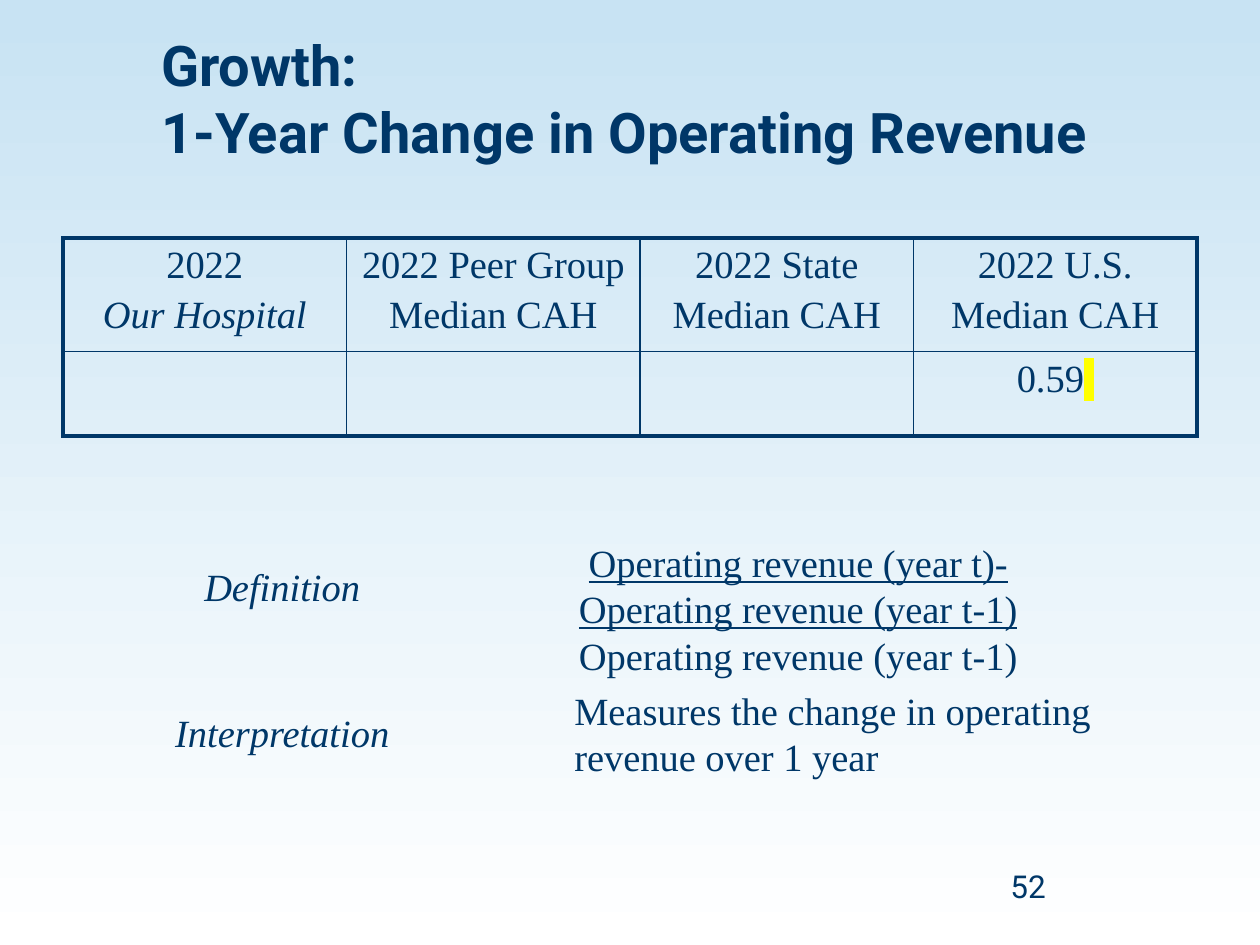
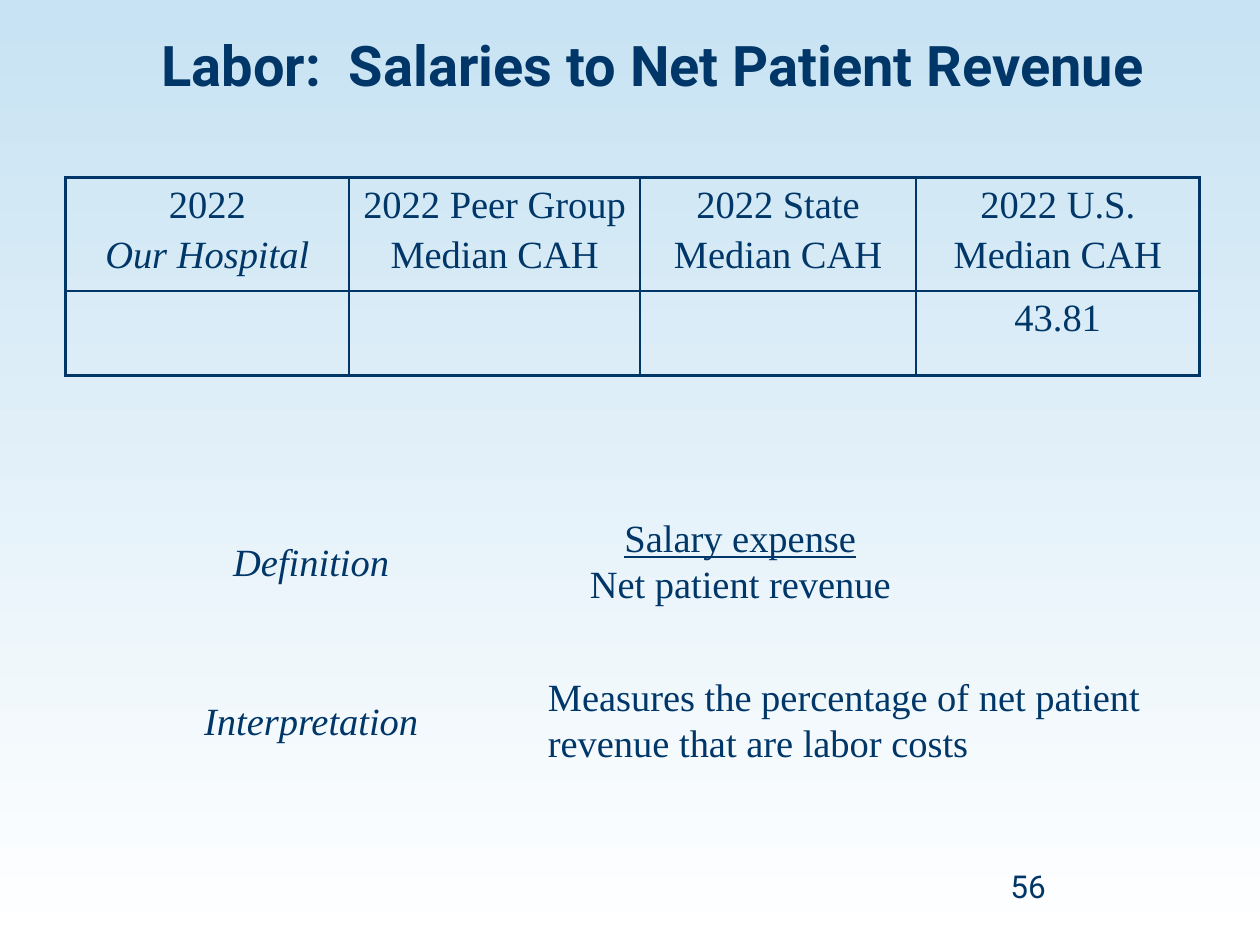
from lxml import etree
from pptx import Presentation
from pptx.dml.color import RGBColor
from pptx.enum.text import MSO_ANCHOR as Anchor, PP_ALIGN as Align
from pptx.oxml import parse_xml
from pptx.oxml.ns import nsdecls, qn
from pptx.util import Inches, Pt

# Content
HEADERS = [
    ("2022", "Our Hospital"),
    ("2022 Peer Group", "Median CAH"),
    ("2022 State", "Median CAH"),
    ("2022 U.S.", "Median CAH"),
]
SLIDES = [
    {
        "title": "Growth:\v1-Year Change in Operating Revenue",
        "number": "52",
        "median": "0.59",
        "highlight_after": True,
        "table_at": (0.5, 1.89),
        "columns": (2.25, 2.33, 2.17, 2.25),
        "numerator": "Operating revenue (year t)- Operating revenue (year t-1)",
        "denominator": "Operating revenue (year t-1)",
        "formula_box": (4.46, 4.23, 3.75, 1.21),
        "meaning": "Measures the change in operating revenue over 1 year",
        "meaning_box": (4.46, 5.4, 4.33, 0.84),
        "labels_center": 2.24,
        "label_tops": (4.42, 5.58),
    },
    {
        "title": "Labor:  Salaries to Net Patient Revenue",
        "number": "56",
        "median": "43.81",
        "highlight_after": False,
        "table_at": (0.52, 1.41),
        "columns": (2.25, 2.31, 2.19, 2.25),
        "numerator": "Salary expense",
        "denominator": "Net patient revenue",
        "formula_box": (4.5, 4.03, 2.75, 0.84),
        "meaning": "Measures the percentage of net patient revenue that are labor costs",
        "meaning_box": (4.25, 5.29, 4.92, 0.84),
        "labels_center": 2.47,
        "label_tops": (4.22, 5.48),
    },
]

# Shared style
NAVY, SKY, WHITE, YELLOW = "003768", "C8E3F3", "FFFFFF", "FFFF00"
HEADING_FONT, BODY_FONT = "Roboto", "Times New Roman"
BODY_SIZE = 22
TITLE_BOX = (1.18, 0.19, 8.26, 1.09)
NUMBER_BOX = (7.92, 6.83, 2.08, 0.5)
LABELS = [("Definition", 1.44), ("Interpretation", 1.91)]
LABEL_HEIGHT = 0.47
ROW_HEIGHTS = (0.9, 0.67)
OUTER_LINE, INNER_LINE = 2.25, 1


def color(hex_string):
    return RGBColor.from_string(hex_string)


def style(paragraph, size=BODY_SIZE, name=BODY_FONT, align=Align.LEFT,
          bold=False, italic=False, underline=False):
    paragraph.alignment = align
    font = paragraph.font
    font.size, font.name = Pt(size), name
    font.bold, font.italic, font.underline = bold, italic, underline
    font.color.rgb = color(NAVY)


def add_text(slide, box, lines, wrap=True):
    """Add a text box; lines holds (text, style options) pairs."""
    frame = slide.shapes.add_textbox(*map(Inches, box)).text_frame
    frame.word_wrap = wrap
    frame.text = "\n".join(text for text, _ in lines)
    for paragraph, (_, options) in zip(frame.paragraphs, lines):
        style(paragraph, **options)


def set_border(cell, side, width):
    line = parse_xml(
        f'<a:{side} {nsdecls("a")} w="{Pt(width)}"><a:solidFill>'
        f'<a:srgbClr val="{NAVY}"/></a:solidFill></a:{side}>')
    properties = cell._tc.get_or_add_tcPr()
    borders = [child for child in properties if child.tag.startswith(qn("a:ln"))]
    properties.insert(len(borders), line)


def add_highlight(run, hex_string):
    highlight = etree.SubElement(run.font._element, qn("a:highlight"))
    etree.SubElement(highlight, qn("a:srgbClr"), val=hex_string)


def add_medians(slide, content):
    left, top = content["table_at"]
    columns = content["columns"]
    table = slide.shapes.add_table(
        len(ROW_HEIGHTS), len(columns), Inches(left), Inches(top),
        Inches(sum(columns)), Inches(sum(ROW_HEIGHTS))).table
    table.first_row = table.horz_banding = False
    for column, width in zip(table.columns, columns):
        column.width = Inches(width)
    for row, height in zip(table.rows, ROW_HEIGHTS):
        row.height = Inches(height)

    last_row, last_column = len(ROW_HEIGHTS) - 1, len(columns) - 1
    values = [""] * last_column + [content["median"]]
    texts = [["\n".join(header) for header in HEADERS], values]
    for r, row_texts in enumerate(texts):
        for c, text in enumerate(row_texts):
            cell = table.cell(r, c)
            cell.text = text
            cell.margin_left = cell.margin_right = Inches(0.09)
            cell.fill.background()
            for index, paragraph in enumerate(cell.text_frame.paragraphs):
                style(paragraph, align=Align.CENTER,
                      italic=paragraph.text == "Our Hospital")
                if index:
                    paragraph.space_before = Pt(0.2 * BODY_SIZE)
            edges = {"lnL": c == 0, "lnR": c == last_column,
                     "lnT": r == 0, "lnB": r == last_row}
            for side, is_outer in edges.items():
                set_border(cell, side, OUTER_LINE if is_outer else INNER_LINE)

    if content["highlight_after"]:
        run = table.cell(last_row, last_column).text_frame.paragraphs[0].add_run()
        run.text = " "
        add_highlight(run, YELLOW)


def add_indicator_slide(presentation, content):
    slide = presentation.slides.add_slide(presentation.slide_layouts[5])

    # Title and slide number
    title = slide.shapes.title
    title.left, title.top, title.width, title.height = map(Inches, TITLE_BOX)
    title.text_frame.text = content["title"]
    title.text_frame.vertical_anchor = Anchor.TOP
    style(title.text_frame.paragraphs[0], 32, HEADING_FONT, bold=True)
    add_text(slide, NUMBER_BOX,
             [(content["number"], {"size": 18, "name": HEADING_FONT})])

    # Formula and its meaning
    add_text(slide, content["formula_box"], [
        (content["numerator"], {"align": Align.CENTER, "underline": True}),
        (content["denominator"], {"align": Align.CENTER}),
    ])
    add_text(slide, content["meaning_box"], [(content["meaning"], {})])

    # Row labels, centred on one axis
    for (label, width), top in zip(LABELS, content["label_tops"]):
        box = (content["labels_center"] - width / 2, top, width, LABEL_HEIGHT)
        add_text(slide, box, [(label, {"align": Align.CENTER, "italic": True})],
                 wrap=False)

    add_medians(slide, content)


def main():
    presentation = Presentation()
    presentation.slide_width, presentation.slide_height = Inches(10), Inches(7.5)

    # Background shared through the master
    fill = presentation.slide_master.background.fill
    fill.gradient()
    fill.gradient_angle = 270
    for stop, position, shade in zip(fill.gradient_stops, (0.01, 1), (SKY, WHITE)):
        stop.position = position
        stop.color.rgb = color(shade)

    for content in SLIDES:
        add_indicator_slide(presentation, content)
    presentation.save("out.pptx")


if __name__ == "__main__":
    main()
